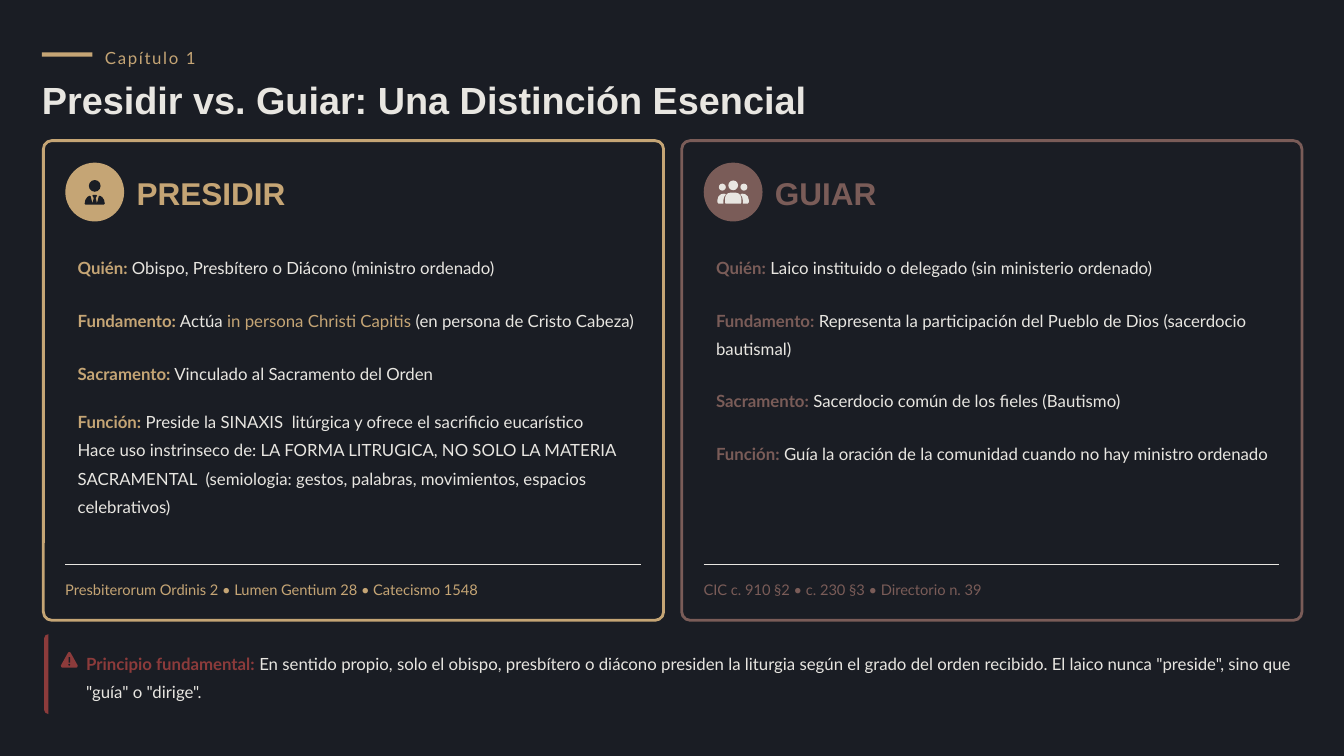
from dataclasses import dataclass

from lxml.etree import SubElement
from pptx import Presentation
from pptx.dml.color import RGBColor
from pptx.enum.shapes import MSO_CONNECTOR, MSO_SHAPE
from pptx.enum.text import MSO_ANCHOR
from pptx.oxml.ns import qn
from pptx.util import Pt


@dataclass(frozen=True)
class Theme:
    background: str = "1A1D24"
    ivory: str = "E8E6E1"
    gold: str = "C5A575"
    mauve: str = "7A5C58"
    red: str = "8C3B3B"
    heading_font: str = "Arial"
    body_font: str = "Lato"
    title_size: float = 27
    heading_size: float = 22.5
    body_size: float = 12
    source_size: float = 10.5


THEME = Theme()
CARD_TOP, CARD_WIDTH, CARD_HEIGHT = 100.5, 443, 342.6
CARD_LEFTS = (31, 487)

# Icon outlines, measured from the centre of their disc
SUIT = [(-6.6, 8.9), (-7.2, 8.3), (-6.7, 5.6), (-5.3, 3.5), (-3.6, 2.6), (-2.9, 3),
        (-1.6, 8.1), (-0.7, 4.2), (-1.7, 2.6), (-1.2, 2), (1.2, 2), (1.7, 2.6),
        (0.7, 4.2), (1.6, 8.1), (2.9, 3), (3.6, 2.6), (5.3, 3.5), (6.7, 5.6),
        (7.2, 8.3), (6.6, 8.9)]
COMPANION = [(-11.2, 5.5), (-10.4, 3), (-8.5, 1.5), (-6.5, 1.2), (-5.2, 1.5),
             (-6.5, 3.6), (-7, 6.1), (-6.9, 8.3), (-10.4, 8.3), (-11.2, 7.4)]
WARNING = [(0, 0), (0.9, 0.5), (6, 9.6), (5.8, 10.8), (5.2, 11.1),
           (-5.2, 11.1), (-5.8, 10.8), (-6, 9.6), (-0.9, 0.5)]
NOTE_BAR = [(3, 0), (3, 57), (1, 56.2), (0, 54), (0, 3), (1, 0.8)]

PRESIDIR = [
    (179, 19.5, [[("Quién:", "accent"), (" Obispo, Presbítero o Diácono (ministro ordenado)", "")]]),
    (216.5, 19.5, [[("Fundamento:", "accent"), (" Actúa ", ""),
                    ("in persona Christi Capitis", "plain accent"),
                    (" (en persona de Cristo Cabeza)", "")]]),
    (254.3, 19.5, [[("Sacramento:", "accent"), (" Vinculado al Sacramento del Orden", "")]]),
    (291.8, 74, [[("Función:", "accent"),
                  (" Preside la SINAXIS  litúrgica y ofrece el sacrificio eucarístico", "")],
                 [("Hace uso instrinseco de: LA FORMA LITRUGICA, NO SOLO LA MATERIA "
                   "SACRAMENTAL  (semiologia: gestos, palabras, movimientos, espacios "
                   "celebrativos)", "")]]),
]
GUIAR = [
    (179, 19.5, [[("Quién:", "accent"), (" Laico instituido o delegado (sin ministerio ordenado)", "")]]),
    (216.5, 39, [[("Fundamento:", "accent"),
                  (" Representa la participación del Pueblo de Dios (sacerdocio bautismal)", "")]]),
    (273.5, 19.5, [[("Sacramento:", "accent"), (" Sacerdocio común de los fieles (Bautismo)", "")]]),
    (311.2, 19.5, [[("Función:", "accent"),
                    (" Guía la oración de la comunidad cuando no hay ministro ordenado", "")]]),
]
PRINCIPLE = [[("Principio fundamental:", "accent"),
              (" En sentido propio, solo el obispo, presbítero o diácono presiden la liturgia "
               "según el grado del orden recibido. El laico nunca \"preside\", sino que "
               "\"guía\" o \"dirige\".", "")]]


def rgb(colour):
    return RGBColor.from_string(colour)


def add_text(slide, box, text, *, accent, size=THEME.body_size, font=THEME.body_font,
             bold=False, line_spacing=None, tracking=None):
    """Text is a string in the accent colour, or paragraphs of (words, role) pairs."""
    frame = slide.shapes.add_textbox(*map(Pt, box)).text_frame
    frame.word_wrap = True
    frame.vertical_anchor = MSO_ANCHOR.MIDDLE
    frame.margin_left = frame.margin_right = frame.margin_top = frame.margin_bottom = 0
    paragraphs = [[(text, "plain accent")]] if isinstance(text, str) else text
    for index, parts in enumerate(paragraphs):
        paragraph = frame.add_paragraph() if index else frame.paragraphs[0]
        if line_spacing:
            paragraph.line_spacing = line_spacing
        for words, role in parts:
            run = paragraph.add_run()
            run.text = words
            run.font.name = font
            run.font.size = Pt(size)
            run.font.bold = bold or role == "accent"
            run.font.color.rgb = rgb(accent if role else THEME.ivory)
            if tracking:
                run._r.get_or_add_rPr().set("spc", str(round(tracking * 100)))


def paint(shape, fill):
    shape.shadow.inherit = False
    shape.fill.solid()
    shape.fill.fore_color.rgb = rgb(fill)
    shape.line.fill.background()


def add_filled(slide, kind, box, fill):
    shape = slide.shapes.add_shape(kind, *map(Pt, box))
    paint(shape, fill)
    return shape


def add_circle(slide, x, y, diameter, fill):
    add_filled(slide, MSO_SHAPE.OVAL, (x - diameter / 2, y - diameter / 2, diameter, diameter), fill)


def add_outline(slide, x, y, points, fill):
    corners = [(Pt(x + dx), Pt(y + dy)) for dx, dy in points]
    builder = slide.shapes.build_freeform(*corners[0])
    builder.add_line_segments(corners[1:], close=True)
    paint(builder.convert_to_shape(), fill)


def add_rule(slide, left, y, width):
    rule = slide.shapes.add_connector(MSO_CONNECTOR.STRAIGHT, Pt(left), Pt(y), Pt(left + width), Pt(y))
    rule.line.color.rgb = rgb(THEME.ivory)
    rule.line.width = Pt(0.75)
    SubElement(rule._element.spPr, qn("a:effectLst"))


def add_minister_icon(slide, x, y):
    add_circle(slide, x, y - 4.4, 8.4, THEME.background)
    add_outline(slide, x, y, SUIT, THEME.background)


def add_assembly_icon(slide, x, y):
    add_circle(slide, x, y - 4.8, 7, THEME.ivory)
    for side in (-1, 1):
        add_circle(slide, x + side * 7.7, y - 3.5, 5, THEME.ivory)
        add_outline(slide, x, y, [(-side * dx, dy) for dx, dy in COMPANION], THEME.ivory)
    torso = add_filled(slide, MSO_SHAPE.ROUND_2_SAME_RECTANGLE, (x - 5.8, y + 0.4, 11.6, 7.9), THEME.ivory)
    torso.adjustments[0] = 0.5
    torso.adjustments[1] = 0.1


def add_card(slide, left, accent, heading, add_icon, rows, sources):
    border = slide.shapes.add_shape(MSO_SHAPE.ROUNDED_RECTANGLE, *map(Pt, (left, CARD_TOP, CARD_WIDTH, CARD_HEIGHT)))
    border.adjustments[0] = 0.0175
    border.shadow.inherit = False
    border.fill.background()
    border.line.color.rgb = rgb(accent)
    border.line.width = Pt(2)

    # Heading with its disc
    inner = left + 15.6
    disc_x, disc_y = left + 36.7, CARD_TOP + 36.7
    add_circle(slide, disc_x, disc_y, 42, accent)
    add_icon(slide, disc_x, disc_y)
    add_text(slide, (left + 66.5, 124, 134, 27), heading, accent=accent,
             size=THEME.heading_size, font=THEME.heading_font, bold=True)

    # Rows of the comparison
    for top, height, paragraphs in rows:
        add_text(slide, (left + 24.5, top, 399, height), paragraphs, accent=accent, line_spacing=1.4)

    # Sources
    add_rule(slide, inner, 403.5, 411)
    add_text(slide, (inner, 412.5, 416, 15), sources, accent=accent,
             size=THEME.source_size, line_spacing=1.2)


def add_principle(slide):
    add_outline(slide, 31.5, 453, NOTE_BAR, THEME.red)
    sign_x, sign_y = 49.5, 465.7
    add_outline(slide, sign_x, sign_y, WARNING, THEME.red)
    add_filled(slide, MSO_SHAPE.ROUNDED_RECTANGLE, (sign_x - 0.5, sign_y + 3.7, 1, 4), THEME.background)
    add_circle(slide, sign_x, sign_y + 9.1, 1.3, THEME.background)
    add_text(slide, (61.5, 462, 865.5, 39), PRINCIPLE, accent=THEME.red, line_spacing=1.4)


def main():
    deck = Presentation()
    deck.slide_width, deck.slide_height = Pt(960), Pt(540)
    slide = deck.slides.add_slide(deck.slide_layouts[6])
    slide.background.fill.solid()
    slide.background.fill.fore_color.rgb = rgb(THEME.background)

    # Chapter and title
    add_filled(slide, MSO_SHAPE.RECTANGLE, (30, 37.5, 36, 3), THEME.gold)
    add_text(slide, (75, 30, 86, 18), "Capítulo 1", accent=THEME.gold, line_spacing=1.3, tracking=1.2)
    add_text(slide, (30, 54, 914, 34), "Presidir vs. Guiar: Una Distinción Esencial",
             accent=THEME.ivory, size=THEME.title_size, font=THEME.heading_font, bold=True)

    # The two roles
    add_card(slide, CARD_LEFTS[0], THEME.gold, "PRESIDIR", add_minister_icon, PRESIDIR,
             "Presbiterorum Ordinis 2 • Lumen Gentium 28 • Catecismo 1548")
    add_card(slide, CARD_LEFTS[1], THEME.mauve, "GUIAR", add_assembly_icon, GUIAR,
             "CIC c. 910 §2 • c. 230 §3 • Directorio n. 39")

    # Closing principle
    add_principle(slide)
    deck.save("out.pptx")


if __name__ == "__main__":
    main()
